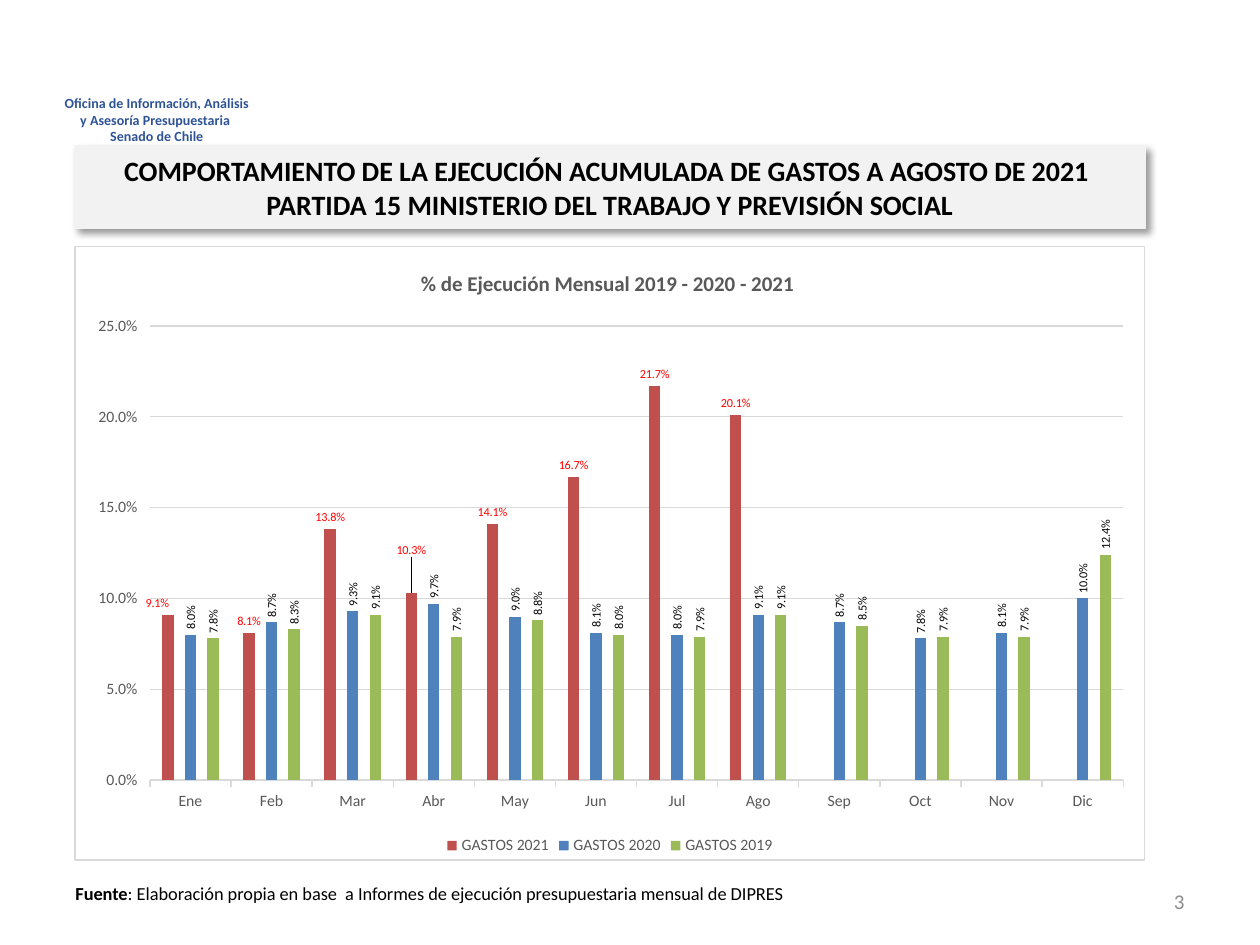
from pptx import Presentation
from pptx.chart.data import CategoryChartData
from pptx.dml.color import RGBColor
from pptx.enum.chart import XL_CHART_TYPE as ChartType, XL_LABEL_POSITION as LabelPosition
from pptx.enum.chart import XL_LEGEND_POSITION as LegendPosition, XL_TICK_MARK as TickMark
from pptx.enum.text import MSO_ANCHOR as Anchor, MSO_AUTO_SIZE as AutoSize, PP_ALIGN as Align
from pptx.oxml import parse_xml
from pptx.oxml.ns import nsdecls
from pptx.util import Inches, Pt

THEME = {
    "font": "Calibri",
    "white": "FFFFFF", "black": "000000", "blue": "2F5496", "panel": "F2F2F2",
    "grey": "595959", "rule": "D9D9D9", "number": "8C8C8C", "alert": "FF0000",
    "office": 8, "title": 16, "source": 10.5, "page": 12,
    "chart": 10, "chart_title": 12, "axis": 9, "label": 7,
}

OFFICE = ["Oficina de Información, Análisis y Asesoría Presupuestaria ", "Senado de Chile"]
TITLE = ["COMPORTAMIENTO DE LA EJECUCIÓN ACUMULADA DE GASTOS A AGOSTO DE 2021 ",
         "PARTIDA 15 MINISTERIO DEL TRABAJO Y PREVISIÓN SOCIAL"]
SOURCE = [("Fuente", True),
          (": Elaboración propia en base  a Informes de ejecución presupuestaria mensual de DIPRES",
           False)]
PAGE_NUMBER = "3"
CHART_TITLE = "% de Ejecución Mensual 2019 - 2020 - 2021 "
MONTHS = ["Ene", "Feb", "Mar", "Abr", "May", "Jun", "Jul", "Ago", "Sep", "Oct", "Nov", "Dic"]
PERCENT = "0.0%"
# name, bar colour, label colour, label rotation in degrees, values
SERIES = [
    ("GASTOS 2021", "C0504D", THEME["alert"], 0,
     [0.091, 0.081, 0.138, 0.103, 0.141, 0.167, 0.217, 0.201] + [None] * 4),
    ("GASTOS 2020", "4F81BD", THEME["black"], -90,
     [0.08, 0.087, 0.093, 0.097, 0.09, 0.081, 0.08, 0.091, 0.087, 0.078, 0.081, 0.1]),
    ("GASTOS 2019", "9BBB59", THEME["black"], -90,
     [0.078, 0.083, 0.091, 0.079, 0.088, 0.08, 0.079, 0.091, 0.085, 0.079, 0.079, 0.124]),
]
LABEL_SHIFTS = {0: (-0.01, 0), 3: (0, -0.05)}  # month index: share of chart width, height
PLOT_AREA = {"x": 0.07, "y": 0.13, "w": 0.91, "h": 0.74}


def inches(*lengths):
    return [Inches(length) for length in lengths]


def rgb(name):
    return RGBColor.from_string(THEME.get(name, name))


def style(font, size, color, bold=False):
    font.name, font.size, font.bold = THEME["font"], Pt(THEME[size]), bold
    font.color.rgb = rgb(color)


def add_span(para, text, size, color, bold=False):
    span = para.add_run()
    span.text = text
    style(span.font, size, color, bold)


def add_box(page, *place):
    box = page.shapes.add_textbox(*inches(*place))
    box.text_frame.word_wrap = True
    return box


def add_letterhead(page):
    frame = add_box(page, 0.39, 0.7, 1.71, 0.46).text_frame
    for index, line in enumerate(OFFICE):
        para = frame.add_paragraph() if index else frame.paragraphs[0]
        para.alignment = Align.CENTER
        add_span(para, line, "office", "blue", bold=True)


def add_title(page):
    title = page.shapes.title
    title.left, title.top, title.width, title.height = inches(0.59, 1.16, 8.5, 0.65)
    title.fill.solid()
    title.fill.fore_color.rgb = title.line.color.rgb = rgb("panel")
    title.line.width = Pt(0.75)
    title._element.spPr.append(parse_xml(
        f'<a:effectLst {nsdecls("a")}><a:outerShdw blurRad="{Pt(4)}" dist="{Pt(3)}" '
        f'dir="{45 * 60000}" algn="tl" rotWithShape="0"><a:srgbClr val="{THEME["black"]}">'
        '<a:alpha val="40000"/></a:srgbClr></a:outerShdw></a:effectLst>'))
    frame = title.text_frame
    frame.auto_size, frame.word_wrap = AutoSize.NONE, True
    frame.vertical_anchor = Anchor.MIDDLE
    para = frame.paragraphs[0]
    para.alignment = Align.CENTER
    for index, line in enumerate(TITLE):
        if index:
            para.add_line_break()
        add_span(para, line, "title", "black", bold=True)


def add_page_number(page):
    frame = add_box(page, 7.17, 6.95, 2.33, 0.4).text_frame
    frame.vertical_anchor = Anchor.MIDDLE
    para = frame.paragraphs[0]
    para.alignment = Align.RIGHT
    add_span(para, PAGE_NUMBER, "page", "number")


def manual_layout(sizes, inner=False):
    target = '<c:layoutTarget val="inner"/>' if inner else ""
    modes = '<c:xMode val="edge"/><c:yMode val="edge"/>' if inner else ""
    values = "".join(f'<c:{key} val="{value}"/>' for key, value in sizes.items())
    return parse_xml(f'<c:layout {nsdecls("c")}><c:manualLayout>{target}{modes}{values}'
                     '</c:manualLayout></c:layout>')


def format_series(series, bar_color, label_color, rotation):
    series.format.fill.solid()
    series.format.fill.fore_color.rgb = rgb(bar_color)
    series.invert_if_negative = False
    labels = series.data_labels
    labels.show_value, labels.position = True, LabelPosition.OUTSIDE_END
    labels.number_format, labels.number_format_is_linked = PERCENT, False
    style(labels.font, "label", label_color)
    labels._element.xpath("c:txPr/a:bodyPr")[0].set("rot", str(rotation * 60000))


def shift_labels(series, color):
    """Move single labels off their bars, without leader lines."""
    for month, (x, y) in LABEL_SHIFTS.items():
        label = series.points[month].data_label
        style(label.font, "label", color)
        label.position = LabelPosition.OUTSIDE_END
        element = series._element.xpath(f"c:dLbls/c:dLbl[c:idx/@val='{month}']")[0]
        element.insert(1, manual_layout({"x": x, "y": y}))
    series.data_labels._element.append(parse_xml(
        f'<c:extLst {nsdecls("c")}><c:ext uri="{{CE6537A1-D6FC-4f65-9D91-7224C49458BB}}" '
        'xmlns:c15="http://schemas.microsoft.com/office/drawing/2012/chart">'
        '<c15:showLeaderLines val="0"/></c:ext></c:extLst>'))


def format_axes(chart):
    months, shares = chart.category_axis, chart.value_axis
    for axis in (months, shares):
        axis.major_tick_mark, axis.minor_tick_mark = TickMark.OUTSIDE, TickMark.NONE
        style(axis.tick_labels.font, "axis", "grey")
    shares.minimum_scale, shares.maximum_scale, shares.major_unit = 0, 0.25, 0.05
    shares.tick_labels.number_format = PERCENT
    shares.tick_labels.number_format_is_linked = False
    shares.format.line.fill.background()
    for line in (months.format.line, shares.major_gridlines.format.line):
        line.color.rgb, line.width = rgb("rule"), Pt(0.75)


def add_spending_chart(page):
    data = CategoryChartData(number_format=PERCENT)
    data.categories = MONTHS
    for name, *_, values in SERIES:
        data.add_series(name, values)
    chart = page.shapes.add_chart(ChartType.COLUMN_CLUSTERED,
                                  *inches(0.59, 1.95, 8.5, 4.88), data).chart
    style(chart.font, "chart", "black")
    chart.has_title = True
    add_span(chart.chart_title.text_frame.paragraphs[0], CHART_TITLE,
             "chart_title", "grey", bold=True)
    chart.has_legend = True
    chart.legend.position = LegendPosition.BOTTOM
    chart.legend.include_in_layout = False
    style(chart.legend.font, "axis", "grey")
    plot = chart.plots[0]
    plot.gap_width, plot.overlap, plot.vary_by_categories = 219, -100, False
    for series, (_, *look, _) in zip(plot.series, SERIES):
        format_series(series, *look)
    shift_labels(plot.series[0], SERIES[0][2])
    format_axes(chart)
    area = chart._chartSpace.xpath("c:chart/c:plotArea")[0]
    for layout in area.xpath("c:layout"):
        area.remove(layout)
    area.insert(0, manual_layout(PLOT_AREA, inner=True))
    chart._chartSpace.xpath("c:chart")[0].addnext(parse_xml(
        f'<c:spPr {nsdecls("c", "a")}><a:solidFill><a:srgbClr val="{THEME["white"]}"/>'
        f'</a:solidFill><a:ln w="{Pt(0.75)}"><a:solidFill><a:srgbClr val="{THEME["rule"]}"/>'
        '</a:solidFill></a:ln></c:spPr>'))


def main():
    deck = Presentation()
    deck.slide_width, deck.slide_height = inches(10, 7.5)
    page = deck.slides.add_slide(deck.slide_layouts[5])
    add_title(page)
    add_letterhead(page)
    add_spending_chart(page)
    source = add_box(page, 0.5, 6.95, 5.91, 0.28).text_frame.paragraphs[0]
    for text, bold in SOURCE:
        add_span(source, text, "source", "black", bold=bold)
    add_page_number(page)
    deck.save("out.pptx")


if __name__ == "__main__":
    main()
